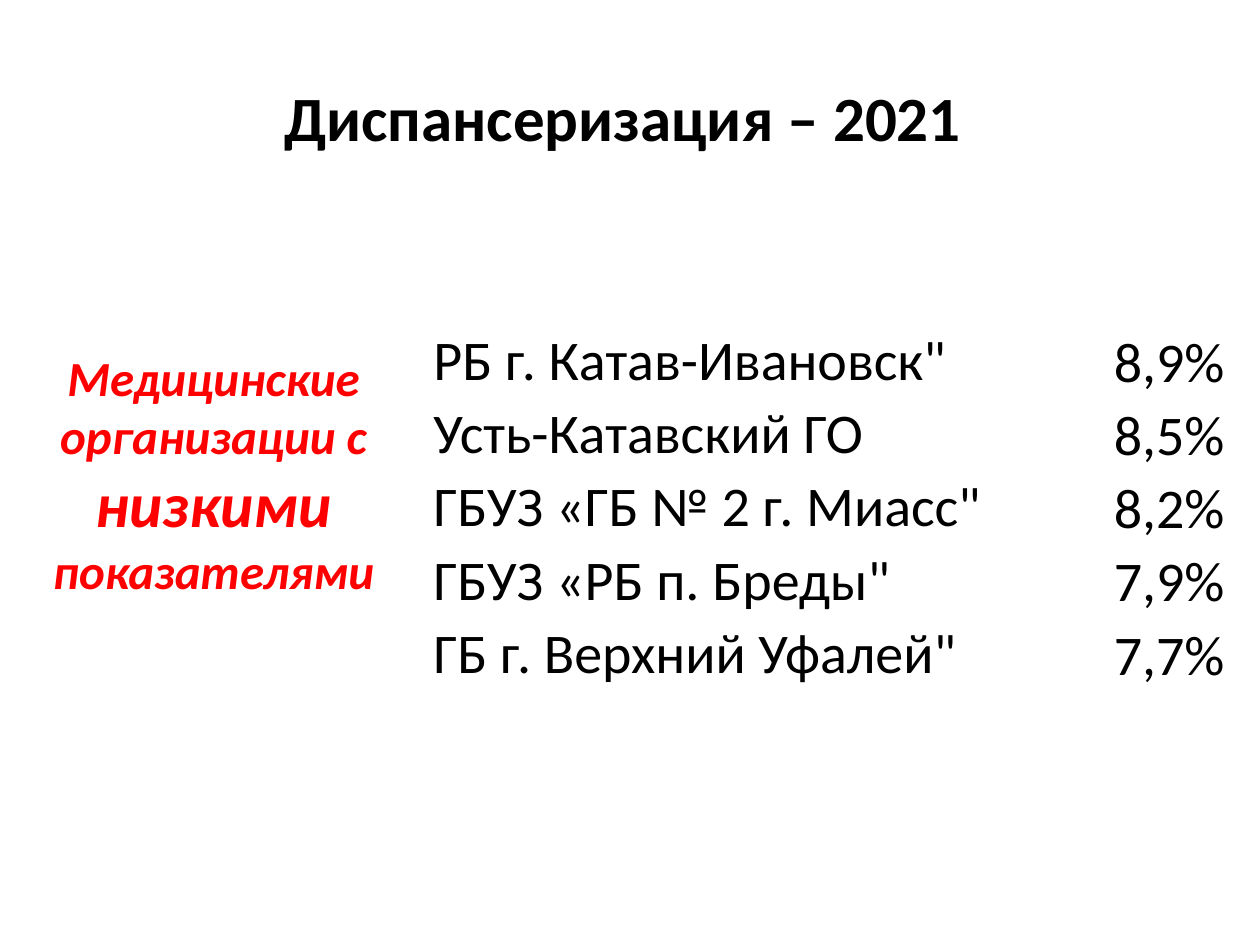
from dataclasses import dataclass

from lxml.etree import SubElement
from pptx import Presentation
from pptx.dml.color import RGBColor
from pptx.enum.text import MSO_ANCHOR, PP_ALIGN
from pptx.oxml.ns import qn
from pptx.util import Inches, Pt


@dataclass(frozen=True)
class Theme:
    """Fonts, sizes and colours of the slide."""
    face: str = "Calibri"
    ink: str = "000000"
    alert: str = "FF0000"
    rule: str = "FFFFFF"
    big: int = 36
    cell: int = 32
    note: int = 28


THEME = Theme()
ROWS = (
    ("РБ г. Катав-Ивановск\"", "8,9%"),
    ("Усть-Катавский ГО", "8,5%"),
    ("ГБУЗ «ГБ № 2 г. Миасс\"", "8,2%"),
    ("ГБУЗ «РБ п. Бреды\"", "7,9%"),
    ("ГБ г. Верхний Уфалей\"", "7,7%"),
)


def style(para, size, color, align, bold=False, italic=False):
    """Set the font and alignment of a paragraph."""
    font = para.font
    font.name, font.size = THEME.face, Pt(size)
    font.bold, font.italic = bold, italic
    font.color.rgb = RGBColor.from_string(color)
    para.alignment = align


def add_title(slide, text):
    """Fill and place the title."""
    title = slide.shapes.title
    title.left, title.top = Inches(0.5), Inches(0.3)
    title.width, title.height = Inches(9), Inches(1.25)
    frame = title.text_frame
    frame.text = text
    frame.vertical_anchor = MSO_ANCHOR.MIDDLE
    style(frame.paragraphs[0], THEME.big, THEME.ink, PP_ALIGN.CENTER, True)


def add_note(slide):
    """Add the red caption beside the table."""
    box = slide.shapes.add_textbox(
        Inches(0.28), Inches(2.1), Inches(2.83), Inches(3.31))
    frame = box.text_frame
    frame.word_wrap = True
    frame.vertical_anchor = MSO_ANCHOR.MIDDLE
    first, last = frame.paragraphs[0], frame.add_paragraph()
    first.add_run().text = "Медицинские организации с "
    word = first.add_run()
    word.text = "низкими"
    word.font.size = Pt(THEME.big)
    last.text = "показателями"
    for para in (first, last):
        style(para, THEME.note, THEME.alert, PP_ALIGN.CENTER, True, True)


def add_rules(cell):
    """Draw the four borders of a cell."""
    props = cell._tc.get_or_add_tcPr()
    for spot, side in enumerate(("lnL", "lnR", "lnT", "lnB")):
        line = SubElement(props, qn(f"a:{side}"), w=str(Pt(1)))
        fill = SubElement(line, qn("a:solidFill"))
        SubElement(fill, qn("a:srgbClr"), val=THEME.rule)
        props.insert(spot, line)


def fill_cell(cell, text, align, anchor):
    """Write and format one table cell."""
    cell.text = text
    cell.fill.background()
    cell.vertical_anchor = anchor
    cell.margin_left = cell.margin_right = cell.margin_top = Inches(0.01)
    cell.margin_bottom = 0
    style(cell.text_frame.paragraphs[0], THEME.cell, THEME.ink, align)
    add_rules(cell)


def add_rates(slide):
    """Add the table of clinics and their rates."""
    table = slide.shapes.add_table(
        len(ROWS), 2, Inches(3.43), Inches(2.57),
        Inches(6.3), Inches(2.91)).table
    table.first_row = table.horz_banding = False
    for col, width in zip(table.columns, (4.58, 1.72)):
        col.width = Inches(width)
    for row, (name, rate) in zip(table.rows, ROWS):
        fill_cell(row.cells[0], name, PP_ALIGN.LEFT, MSO_ANCHOR.MIDDLE)
        fill_cell(row.cells[1], rate, PP_ALIGN.RIGHT, MSO_ANCHOR.BOTTOM)


def main():
    """Build and save the slide."""
    deck = Presentation()
    deck.slide_width, deck.slide_height = Inches(10), Inches(7.5)
    slide = deck.slides.add_slide(deck.slide_layouts[5])
    add_title(slide, "Диспансеризация – 2021 ")
    add_note(slide)
    add_rates(slide)
    deck.save("out.pptx")


if __name__ == "__main__":
    main()
